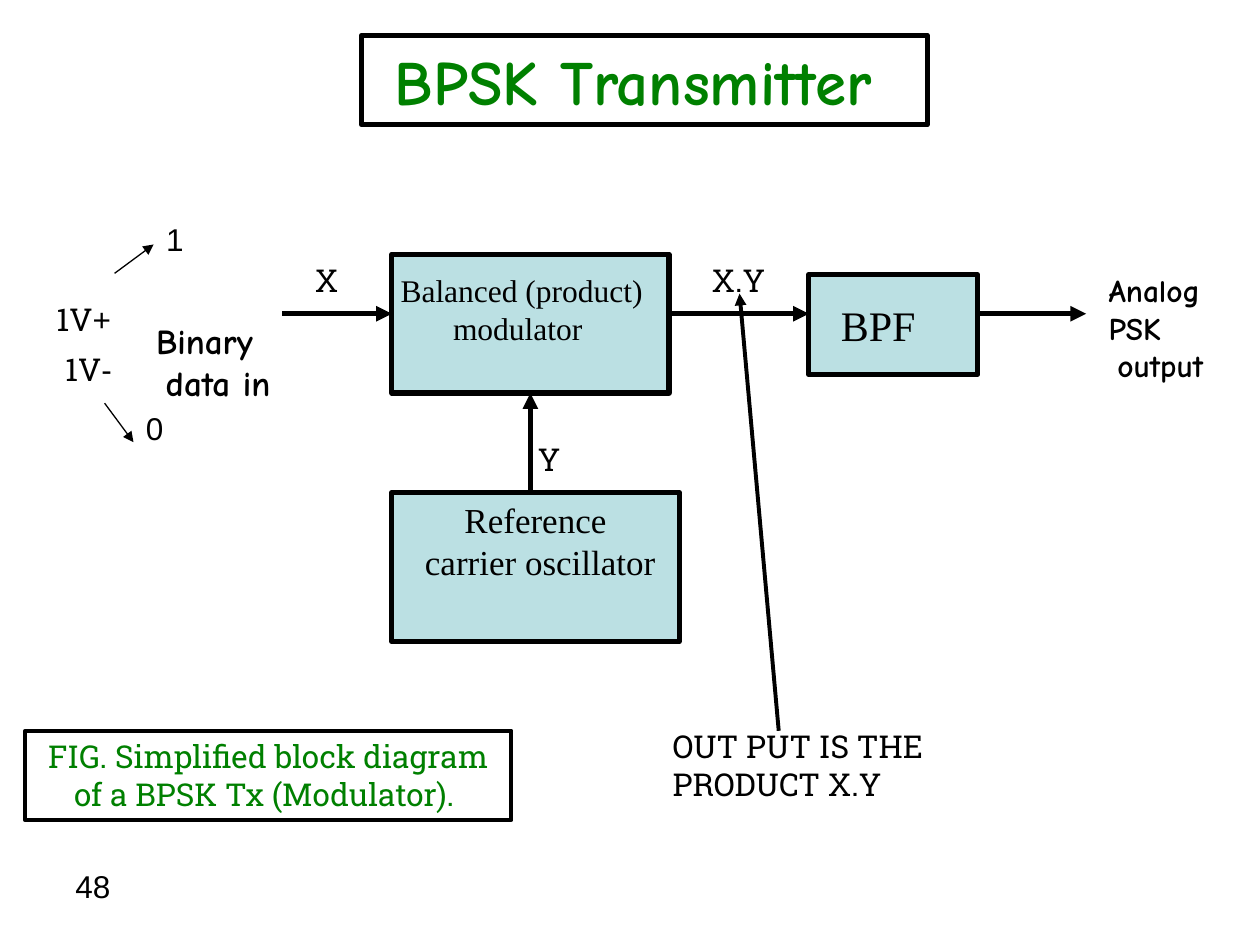
from lxml.etree import SubElement
from pptx import Presentation
from pptx.dml.color import RGBColor
from pptx.enum.shapes import MSO_CONNECTOR, MSO_SHAPE
from pptx.enum.text import MSO_ANCHOR, PP_ALIGN
from pptx.oxml.ns import qn
from pptx.util import Pt

BLACK = RGBColor(0x00, 0x00, 0x00)
GREEN = RGBColor(0x00, 0x80, 0x00)
BLUE = RGBColor(0xBB, 0xE0, 0xE3)
SLAB, COMIC, TIMES, ARIAL = "Roboto Slab", "Comic Neue", "Times New Roman", "Arial"


def write(sp, *lines, font=SLAB, size=18, color=BLACK, bold=False,
          align=PP_ALIGN.LEFT, anchor=MSO_ANCHOR.TOP, rtl=False):
    tf = sp.text_frame
    tf.word_wrap = True
    tf.vertical_anchor = anchor
    for i, line in enumerate(lines):
        p = tf.add_paragraph() if i else tf.paragraphs[0]
        p.alignment = align
        p.space_before = Pt(7 if i else 0)
        r = p.add_run()
        r.text = line
        r.font.name, r.font.size, r.font.bold = font, Pt(size), bold
        r.font.color.rgb = color
        if rtl:
            p._p.get_or_add_pPr().set("rtl", "1")
            SubElement(r._r.get_or_add_rPr(), qn("a:cs")).set("typeface", ARIAL)


prs = Presentation()
prs.slide_width, prs.slide_height = Pt(720), Pt(540)
slide = prs.slides.add_slide(prs.slide_layouts[5])
shapes = slide.shapes

title = shapes.title
title.left, title.top, title.width, title.height = Pt(206.6), Pt(20.2), Pt(323.3), Pt(51.1)
title.line.color.rgb = BLACK
title.line.width = Pt(3)
write(title, "BPSK Transmitter ", font=COMIC, size=36, color=GREEN, bold=True,
      align=PP_ALIGN.CENTER, anchor=MSO_ANCHOR.MIDDLE)

boxes = []
for x, y, w, h, fill, weight in [
    (223.9, 145.4, 158.4, 79.2, BLUE, 3),
    (223.9, 281.5, 164.2, 85, BLUE, 3),
    (462.2, 157, 96.5, 56.9, BLUE, 3),
    (14.4, 417.6, 277.9, 51.1, None, 2.25),
]:
    sp = shapes.add_shape(MSO_SHAPE.RECTANGLE, Pt(x), Pt(y), Pt(w), Pt(h))
    sp.shadow.inherit = False
    if fill is None:
        sp.fill.background()
    else:
        sp.fill.solid()
        sp.fill.fore_color.rgb = fill
    sp.line.color.rgb = BLACK
    sp.line.width = Pt(weight)
    boxes.append(sp)
modulator, oscillator, bpf, caption = boxes
write(caption, "FIG. Simplified block diagram of a BPSK Tx (Modulator). ",
      color=GREEN, align=PP_ALIGN.CENTER)

signal_y = 179.3
arrows = []
for x1, y1, x2, y2, weight in [
    (161.3, signal_y, 223.9, signal_y, 3),
    (382.3, signal_y, 462.2, signal_y, 3),
    (558.7, signal_y, 620.6, signal_y, 3),
    (65.5, 156.2, 87.8, 139.7, 0.75),
    (59.8, 230.4, 76.3, 252.7, 0.75),
    (445, 417.6, 422.6, 167.8, 2.25),
    (303.1, 281.5, 303.1, 224.6, 3),
]:
    c = shapes.add_connector(MSO_CONNECTOR.STRAIGHT, Pt(x1), Pt(y1), Pt(x2), Pt(y2))
    c.line.color.rgb = BLACK
    c.line.width = Pt(weight)
    SubElement(c.line._get_or_add_ln(), qn("a:tailEnd")).set("type", "triangle")
    SubElement(c._element.spPr, qn("a:effectLst"))
    arrows.append(c)
arrows[-1].end_connect(modulator, 2)

center = PP_ALIGN.CENTER
for x, y, w, h, lines, style in [
    (201.6, 151.2, 193, 87.1, ["Balanced (product) modulator "], dict(font=TIMES, align=center)),
    (229.7, 281.5, 152.6, 55.4, ["Reference carrier oscillator "],
     dict(font=TIMES, size=20, align=center, rtl=True)),
    (468, 167.8, 67.7, 36, ["BPF"], dict(font=TIMES, size=24, align=center)),
    (626.4, 151.2, 79.2, 72, ["Analog PSK output "], dict(font=COMIC, bold=True, rtl=True)),
    (82.1, 179.3, 90.7, 55.4, ["Binary data in "], dict(font=COMIC, size=20, bold=True, rtl=True)),
    (25.2, 167.8, 62.6, 61.2, ["+1V", "-1V "], dict(rtl=True)),
    (172.8, 145.4, 33.8, 28.8, ["X"], dict(rtl=True)),
    (305, 247.7, 22.3, 28.8, ["Y"], dict(rtl=True)),
    (399.6, 145.4, 51.1, 28.8, ["X.Y"], dict(rtl=True)),
    (87.8, 122.4, 28.1, 28.8, ["1"], dict(rtl=True)),
    (76.3, 230.4, 28.1, 28.8, ["0"], dict(rtl=True)),
    (377.3, 411.8, 187.2, 51.1, ["OUT PUT IS THE PRODUCT X.Y"], {}),
    (36, 491.8, 167.8, 37.4, ["48"], dict(font=ARIAL)),
]:
    write(shapes.add_textbox(Pt(x), Pt(y), Pt(w), Pt(h)), *lines, **style)

prs.save("out.pptx")
